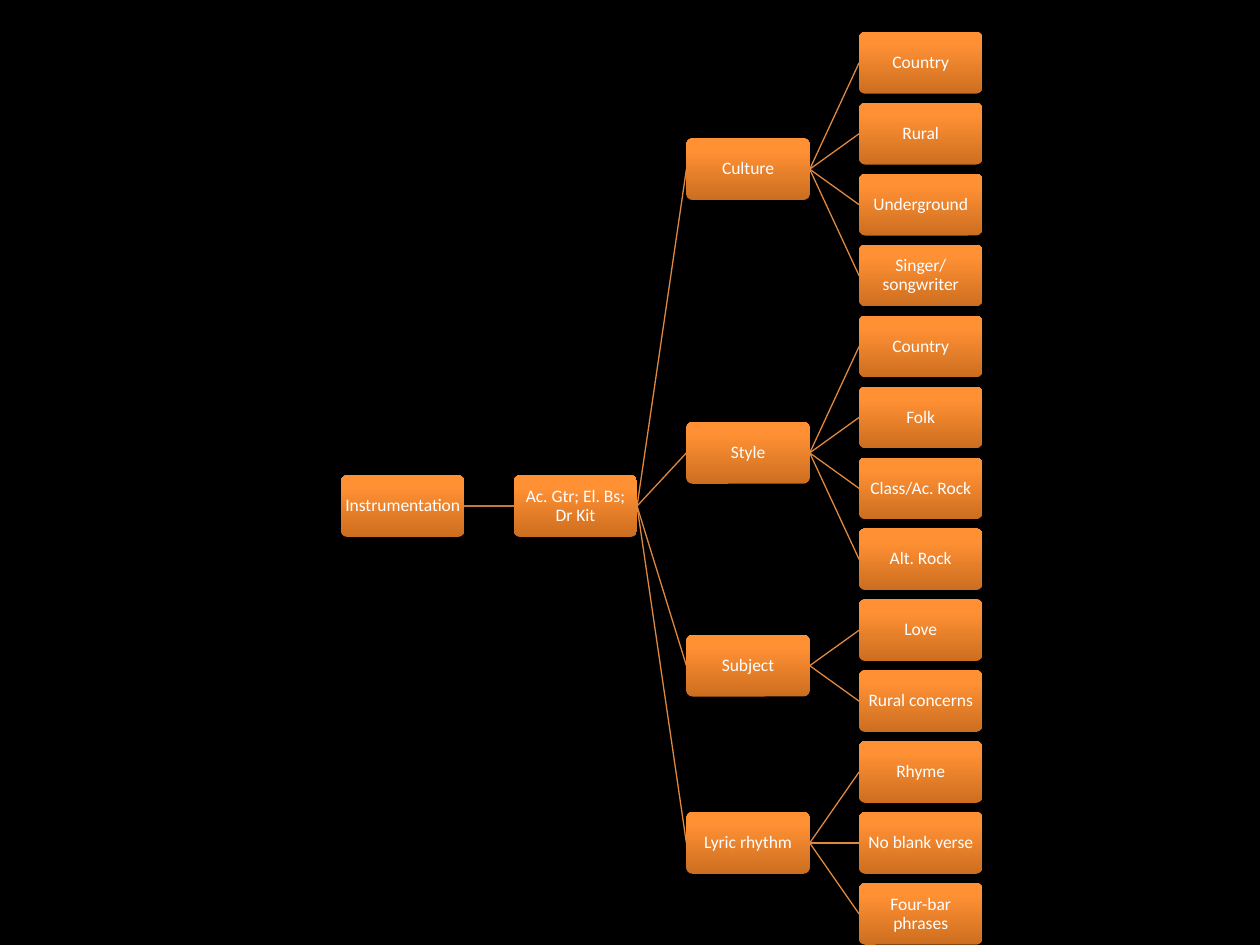
"""Build a slide with a left-to-right tree of musical traits."""
from lxml import etree
from pptx import Presentation
from pptx import util as u
from pptx.dml.color import RGBColor
from pptx.enum import shapes, text
from pptx.oxml import parse_xml
from pptx.oxml.ns import nsdecls, qn

COLORS = {
    "background": "000000", "text": "FFFFFF", "shadow": "000000",
    "dark": "CC6E20", "mid": "FF9034", "light": "FF9136",
    "trunk": "C67838", "branch": "E08840",
}
BOX_W, BOX_H = 70.48, 35.24
COL_STEP, ROW_STEP = 1.4 * BOX_W, 1.15 * BOX_H

TREE = ("Instrumentation", [
    ("Ac. Gtr; El. Bs; Dr Kit", [
        ("Culture", ["Country", "Rural", "Underground", "Singer/songwriter"]),
        ("Style", ["Country", "Folk", "Class/Ac. Rock", "Alt. Rock"]),
        ("Subject", ["Love", "Rural concerns"]),
        ("Lyric rhythm", ["Rhyme", "No blank verse", "Four-bar phrases"]),
    ]),
])


def rgb(name):
    """Return a palette colour."""
    return RGBColor.from_string(COLORS[name])


def add_text(s, words, *, size=10, font="Calibri", color="text", inset=0.8):
    """Write centred text into a shape."""
    tf = s.text_frame
    tf.word_wrap = True
    tf.vertical_anchor = text.MSO_ANCHOR.MIDDLE
    tf.margin_left = tf.margin_right = u.Pt(inset)
    tf.margin_top = tf.margin_bottom = u.Pt(inset)
    p = tf.paragraphs[0]
    p.alignment = text.PP_ALIGN.CENTER
    p.line_spacing = 0.9
    r = p.add_run()
    r.text = words
    r.font.size = u.Pt(size)
    r.font.name = font
    r.font.color.rgb = rgb(color)


def style_box(s):
    """Give a box its three-stop gradient and soft shadow."""
    stops = "".join(
        f'<a:gs pos="{pos * 1000}"><a:srgbClr val="{COLORS[name]}"/></a:gs>'
        for pos, name in ((0, "dark"), (80, "mid"), (100, "light")))
    s.line.fill.background()
    s.shadow.inherit = False
    pr = s._element.spPr
    pr.find(qn("a:prstGeom")).addnext(parse_xml(
        f'<a:gradFill {nsdecls("a")} rotWithShape="1"><a:gsLst>{stops}</a:gsLst>'
        '<a:lin ang="16200000" scaled="0"/></a:gradFill>'))
    pr.find(qn("a:effectLst")).append(parse_xml(
        f'<a:outerShdw {nsdecls("a")} blurRad="{u.Pt(3.1)}" dist="{u.Pt(1.8)}" '
        f'dir="5400000" rotWithShape="0"><a:srgbClr val="{COLORS["shadow"]}">'
        '<a:alpha val="35000"/></a:srgbClr></a:outerShdw>'))


def add_box(sp, words, left, top):
    """Draw one labelled box."""
    s = sp.add_shape(shapes.MSO_SHAPE.ROUNDED_RECTANGLE,
                     u.Pt(left), u.Pt(top), u.Pt(BOX_W), u.Pt(BOX_H))
    s.adjustments[0] = 0.1
    style_box(s)
    add_text(s, words)
    return s


def add_link(sp, parent, child, color):
    """Join the right side of a parent to the left side of its child."""
    c = sp.add_connector(shapes.MSO_CONNECTOR.STRAIGHT, 0, 0, 0, 0)
    c.begin_connect(parent, 3)
    c.end_connect(child, 1)
    c.line.color.rgb = rgb(color)
    c.line.width = u.Pt(0.75)
    etree.SubElement(c._element.spPr, qn("a:effectLst"))


def add_tree(sp, node, left, top, level=0):
    """Draw a tree from its top left corner; return root, its top and row count."""
    words, children = (node, []) if isinstance(node, str) else node
    branches, rows = [], 0
    for child in children:
        branch = add_tree(sp, child, left + COL_STEP, top + rows * ROW_STEP, level + 1)
        branches.append(branch)
        rows += branch[2]
    if branches:
        top = (branches[0][1] + branches[-1][1]) / 2
    box = add_box(sp, words, left, top)
    for child_box, _, _ in branches:
        add_link(sp, box, child_box, "branch" if level else "trunk")
    return box, top, max(rows, 1)


def main():
    """Create and save the presentation."""
    prs = Presentation()
    prs.slide_width, prs.slide_height = u.Pt(720), u.Pt(540)
    slide = prs.slides.add_slide(prs.slide_layouts[6])
    fill = slide.background.fill
    fill.solid()
    fill.fore_color.rgb = rgb("background")
    add_tree(slide.shapes, TREE, 194.9, 18.3)
    prs.save("out.pptx")


if __name__ == "__main__":
    main()
